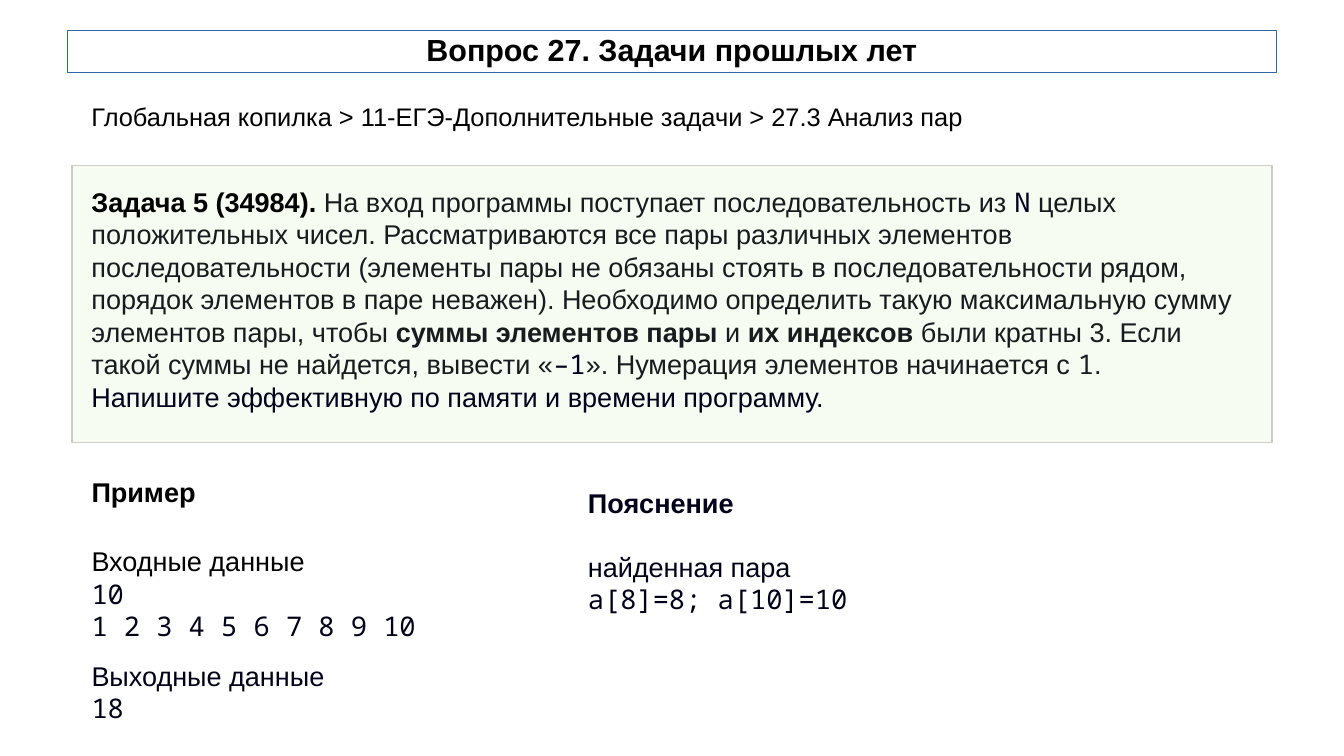
from dataclasses import dataclass

import pptx
import pptx.dml.color
import pptx.enum.shapes
import pptx.enum.text
import pptx.util


@dataclass(frozen=True)
class Theme:
    sans: str = "Arial"
    mono: str = "Noto Sans Mono"
    title_size: int = 18
    breadcrumb_size: int = 15
    body_size: int = 16
    black: str = "000000"
    ink: str = "191C1F"
    navy: str = "00001A"
    white: str = "FFFFFF"
    title_line: str = "3465A4"
    task_fill: str = "F6FCF2"
    task_line: str = "CCCCCC"


THEME = Theme()


@dataclass(frozen=True)
class Span:
    """A stretch of text; each newline in it is a line break."""
    text: str
    color: str = THEME.black
    bold: bool = False
    font: str = THEME.sans


@dataclass(frozen=True)
class Block:
    """A paragraph with its spacing in points."""
    spans: tuple
    before: float = 0
    after: float = 0
    line_spacing: float = 1.0


def ink(text, bold=False):
    return Span(text, THEME.ink, bold)


def code(text, color=THEME.navy):
    return Span(text, color, font=THEME.mono)


def navy(text, bold=False):
    return Span(text, THEME.navy, bold)


class SlideBuilder:
    COLUMNS, ROWS = 56, 62

    def __init__(self, presentation, theme):
        self.theme = theme
        self.column = presentation.slide_width / self.COLUMNS
        self.row = presentation.slide_height / self.ROWS
        self.slide = presentation.slides.add_slide(presentation.slide_layouts[6])

    def place(self, left, top, width, height):
        """Turn grid columns and rows into lengths."""
        return (round(left * self.column), round(top * self.row),
                round(width * self.column), round(height * self.row))

    def panel(self, area, blocks, fill=None, line=None, line_width=0,
              size=None, inset=0.16):
        shape = self.slide.shapes.add_shape(
            pptx.enum.shapes.MSO_SHAPE.RECTANGLE, *self.place(*area))
        shape.shadow.inherit = False
        if fill:
            shape.fill.solid()
            shape.fill.fore_color.rgb = pptx.dml.color.RGBColor.from_string(fill)
        else:
            shape.fill.background()
        if line:
            shape.line.color.rgb = pptx.dml.color.RGBColor.from_string(line)
            shape.line.width = pptx.util.Pt(line_width)
        else:
            shape.line.fill.background()
        self.fill_text(shape.text_frame, blocks, size, inset, inset)
        return shape

    def title(self, area, text):
        shape = self.panel(area, [Block((Span(text, bold=True),), line_spacing=0.9)],
                           line=self.theme.title_line, line_width=0.28,
                           size=self.theme.title_size, inset=0)
        shape.text_frame.vertical_anchor = pptx.enum.text.MSO_ANCHOR.MIDDLE
        shape.text_frame.paragraphs[0].alignment = pptx.enum.text.PP_ALIGN.CENTER

    def note(self, area, blocks):
        shape = self.slide.shapes.add_textbox(*self.place(*area))
        self.fill_text(shape.text_frame, blocks, None, 0.1, 0.05)

    def fill_text(self, frame, blocks, size, side_inset, end_inset):
        frame.word_wrap = True
        frame.vertical_anchor = pptx.enum.text.MSO_ANCHOR.TOP
        frame.margin_left = frame.margin_right = pptx.util.Inches(side_inset)
        frame.margin_top = frame.margin_bottom = pptx.util.Inches(end_inset)
        for index, block in enumerate(blocks):
            paragraph = frame.add_paragraph() if index else frame.paragraphs[0]
            paragraph.alignment = pptx.enum.text.PP_ALIGN.LEFT
            paragraph.space_before = pptx.util.Pt(block.before)
            paragraph.space_after = pptx.util.Pt(block.after)
            paragraph.line_spacing = block.line_spacing
            paragraph.font.size = pptx.util.Pt(size or self.theme.body_size)
            self.add_spans(paragraph, block.spans)

    def add_spans(self, paragraph, spans):
        """Add the spans, with styles they all share set on the paragraph."""
        fonts = []
        for span in spans:
            for index, text in enumerate(span.text.split("\n")):
                if index:
                    paragraph.add_line_break()
                if text:
                    run = paragraph.add_run()
                    run.text = text
                    fonts.append((run.font, span))
        if len(set((span.color, span.bold, span.font) for span in spans)) == 1:
            fonts = [(paragraph.font, spans[0])]
        for font, span in fonts:
            font.name = span.font
            font.bold = span.bold
            font.color.rgb = pptx.dml.color.RGBColor.from_string(span.color)


def main():
    presentation = pptx.Presentation()
    presentation.slide_width = pptx.util.Inches(11.02)
    presentation.slide_height = pptx.util.Inches(6.2)
    builder = SlideBuilder(presentation, THEME)

    builder.panel((3, 6.7, 50, 5.5), [Block((Span(
        "Глобальная копилка > 11-ЕГЭ-Дополнительные задачи > 27.3 Анализ пар"),))],
        fill=THEME.white, size=THEME.breadcrumb_size)
    builder.title((2.8, 2.5, 50.4, 3.4), "Вопрос 27. Задачи прошлых лет")

    task = (
        Span("Задача 5 (34984). ", bold=True),
        ink("На вход программы поступает последовательность из "),
        code("N"),
        ink(" целых положительных чисел. Рассматриваются все пары различных "
            "элементов последовательности (элементы пары не обязаны стоять в "
            "последовательности рядом, порядок элементов в паре неважен). "
            "Необходимо определить такую максимальную сумму элементов пары, чтобы "),
        ink("суммы элементов пары", bold=True),
        ink(" и "),
        ink("их индексов", bold=True),
        ink(" были кратны 3. Если такой суммы не найдется, вывести «"),
        code("–1"),
        ink("». Нумерация элементов начинается с "),
        code("1", THEME.ink),
        ink("."),
    )
    builder.panel(
        (3, 13.6, 50, 22.7),
        [Block(task), Block((navy("Напишите эффективную по памяти и времени программу."),))],
        fill=THEME.task_fill, line=THEME.task_line)

    builder.panel((3, 37.4, 19, 22.4), [
        Block((Span("Пример", bold=True),), 11.9, 9.9),
        Block((Span("Входные данные\n"), code("10\n1 2 3 4 5 6 7 8 9 10")), 11.9, 9.9),
        Block((navy("Выходные данные"),)),
        Block((code("18"),)),
    ], fill=THEME.white)

    builder.note((24, 39.4, 15.65, 11.3), [
        Block((navy("Пояснение", bold=True),), after=18.4),
        Block((navy("найденная пара"),)),
        Block((code("a[8]=8; a[10]=10"),)),
    ])
    presentation.save("out.pptx")


if __name__ == "__main__":
    main()
